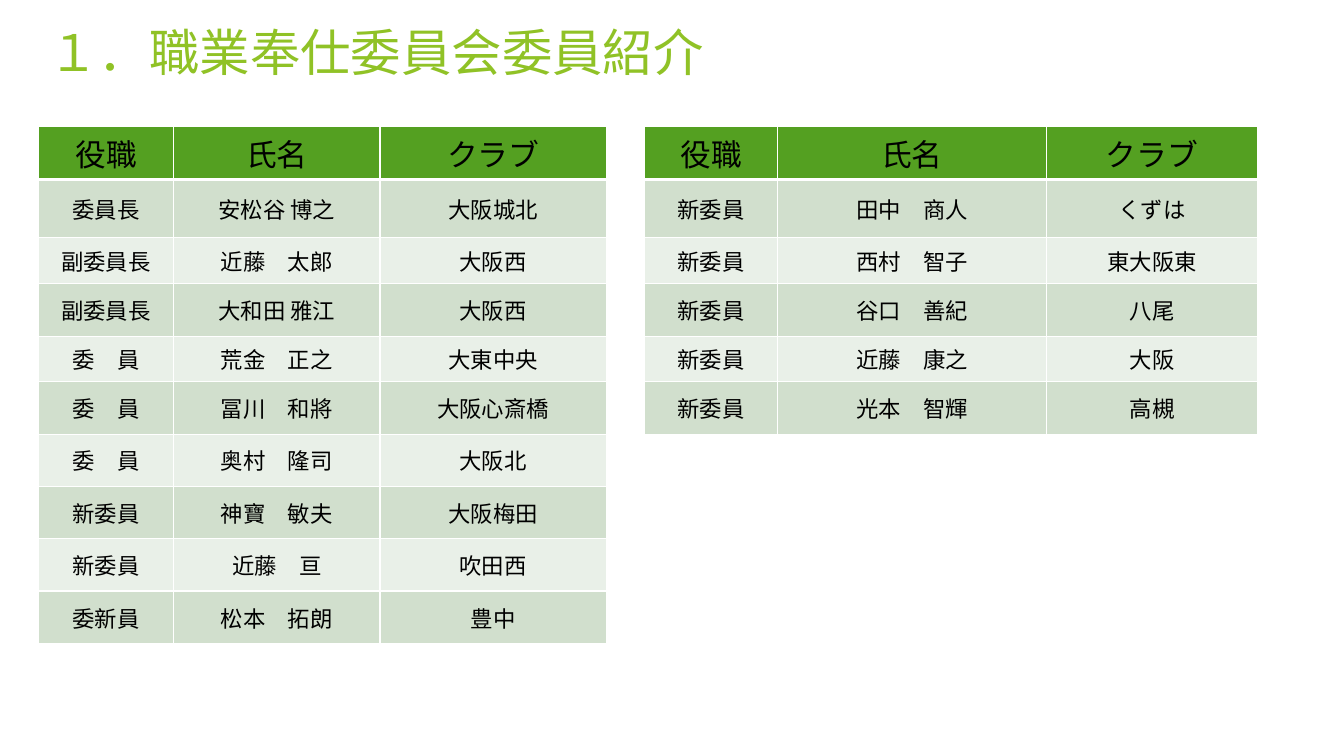
from lxml.etree import SubElement
from pptx import Presentation
from pptx.dml.color import RGBColor
from pptx.enum.text import MSO_ANCHOR as Anchor, PP_ALIGN as Align
from pptx.oxml import parse_xml
from pptx.oxml.ns import nsdecls, qn
from pptx.util import Pt

FONT = "Noto Sans CJK JP"
HEAD, DARK, PALE = "54A021", "D1DFCD", "E9F0E8"
COLS = [96.5, 147.5, 161.5, 27.5, 95, 192, 151]
ROWS = [31, 41.5, 32.5, 38, 32.5, 37.5, 37, 37.5, 37.5, 37.5]
TITLES = ("役職", "氏名", "クラブ")
LEFT = [
    TITLES,
    ("委員長", "安松谷 博之", "大阪城北"),
    ("副委員長", "近藤　太郎", "大阪西"),
    ("副委員長", "大和田 雅江", "大阪西"),
    ("委　員", "荒金　正之", "大東中央"),
    ("委　員", "冨川　和將", "大阪心斎橋"),
    ("委　員", "奥村　隆司", "大阪北"),
    ("新委員", "神寶　敏夫", "大阪梅田"),
    ("新委員", "近藤　亘", "吹田西"),
    ("委新員", "松本　拓朗", "豊中"),
]
RIGHT = [
    TITLES,
    ("新委員", "田中　商人", "くずは"),
    ("新委員", "西村　智子", "東大阪東"),
    ("新委員", "谷口　善紀", "八尾"),
    ("新委員", "近藤　康之", "大阪"),
    ("新委員", "光本　智輝", "高槻"),
]


def color(code):
    return RGBColor.from_string(code)


def style(para, size, code, align):
    para.alignment = align
    font = para.font
    font.size = Pt(size)
    font.color.rgb = color(code)
    font.name = FONT
    props = para._p.pPr.find(qn("a:defRPr"))
    SubElement(props, qn("a:ea")).set("typeface", FONT)


def rule(cell, width):
    props = cell._tc.get_or_add_tcPr()
    props.insert(0, parse_xml(
        f'<a:lnB {nsdecls("a")} w="{Pt(width)}"><a:solidFill>'
        '<a:srgbClr val="FFFFFF"/></a:solidFill></a:lnB>'))


def format_cell(cell, row):
    pad = 0 if row else 3
    cell.margin_left = cell.margin_right = Pt(5)
    cell.margin_top = cell.margin_bottom = Pt(pad)
    cell.vertical_anchor = Anchor.MIDDLE
    cell.fill.background()
    style(cell.text_frame.paragraphs[0], 16 if row else 22, "000000", Align.CENTER)
    if row == 0:
        rule(cell, 3)


def fill_block(table, block, start):
    for row, names in enumerate(block):
        code = (DARK if row % 2 else PALE) if row else HEAD
        for col, name in enumerate(names, start):
            cell = table.cell(row, col)
            cell.text_frame.paragraphs[0].add_run().text = name
            cell.fill.solid()
            cell.fill.fore_color.rgb = color(code)


def add_roster(slide):
    frame = slide.shapes.add_table(
        len(ROWS), len(COLS), Pt(27.5), Pt(90.5), Pt(sum(COLS)), Pt(sum(ROWS)))
    table = frame.table
    table.first_row = table.horz_banding = False
    for col, width in zip(table.columns, COLS):
        col.width = Pt(width)
    for row, height in enumerate(ROWS):
        table.rows[row].height = Pt(height)
        for cell in table.rows[row].cells:
            format_cell(cell, row)
    fill_block(table, LEFT, 0)
    fill_block(table, RIGHT, 4)
    table.cell(6, 4).merge(table.cell(7, 6))


def set_title(slide, text):
    title = slide.shapes.title
    title.left, title.top, title.width, title.height = Pt(27.5), Pt(10), Pt(613), Pt(53)
    title.text_frame.text = text
    title.text_frame.vertical_anchor = Anchor.MIDDLE
    style(title.text_frame.paragraphs[0], 36, "90C226", Align.LEFT)


def main():
    deck = Presentation()
    deck.slide_width, deck.slide_height = Pt(960), Pt(540)
    slide = deck.slides.add_slide(deck.slide_layouts[5])
    add_roster(slide)
    set_title(slide, "１．職業奉仕委員会委員紹介")
    deck.save("out.pptx")


if __name__ == "__main__":
    main()
